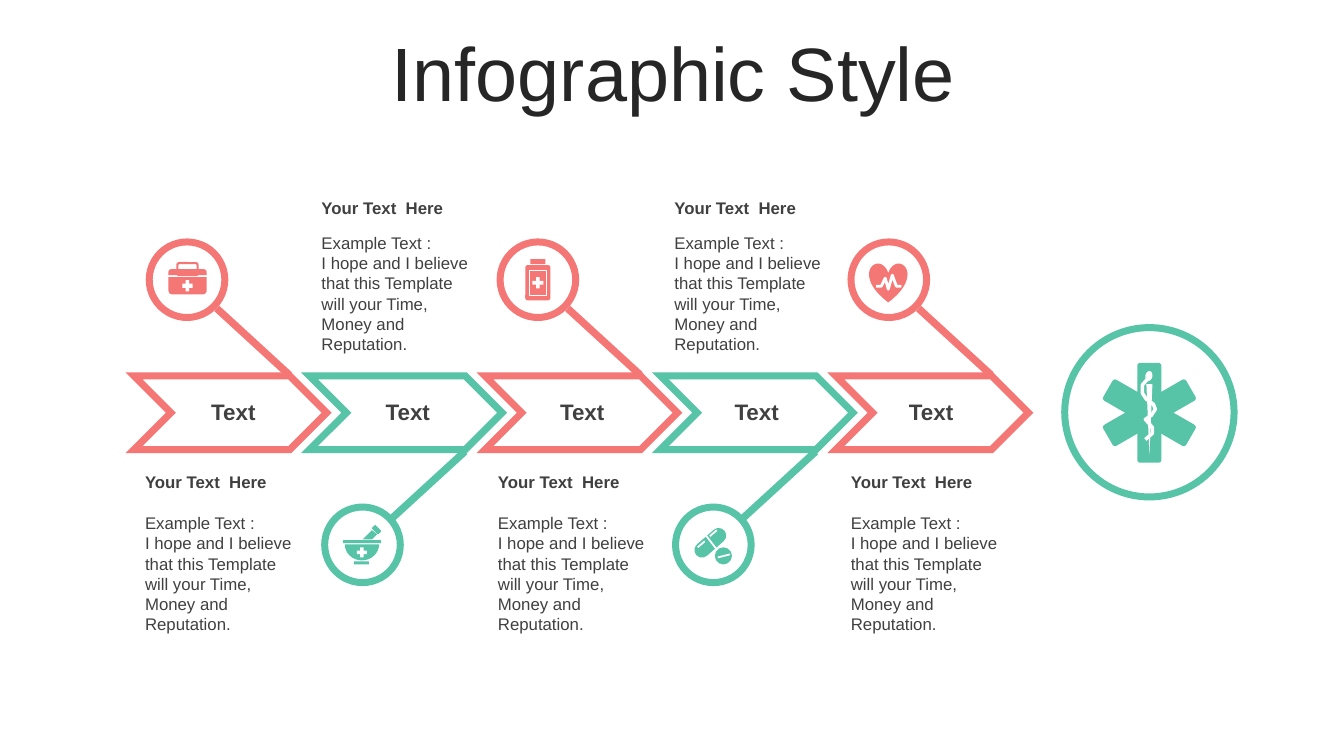
from math import cos, pi, sin

from lxml import etree
from pptx import Presentation
from pptx.dml.color import RGBColor
from pptx.enum.shapes import MSO_CONNECTOR, MSO_SHAPE
from pptx.enum.text import MSO_ANCHOR, PP_ALIGN
from pptx.oxml.ns import qn
from pptx.util import Inches, Pt

CHEVRON, OVAL, HEART = MSO_SHAPE.CHEVRON, MSO_SHAPE.OVAL, MSO_SHAPE.HEART
RECTANGLE, ROUNDED = MSO_SHAPE.RECTANGLE, MSO_SHAPE.ROUNDED_RECTANGLE
ROUND_TOP, CROSS = MSO_SHAPE.ROUND_2_SAME_RECTANGLE, MSO_SHAPE.CROSS
TRIANGLE = MSO_SHAPE.ISOSCELES_TRIANGLE
STRAIGHT = MSO_CONNECTOR.STRAIGHT
LEFT, CENTER = PP_ALIGN.LEFT, PP_ALIGN.CENTER
TOP, MIDDLE = MSO_ANCHOR.TOP, MSO_ANCHOR.MIDDLE

COLORS = {
    "coral": "F47775",
    "teal": "57C3A7",
    "white": "FFFFFF",
    "title": "262626",
    "text": "404040",
}

presentation = Presentation()
presentation.slide_width = Inches(13.33)
presentation.slide_height = Inches(7.5)
slide = presentation.slides.add_slide(presentation.slide_layouts[6])


def paint(shape, fill, line, width):
    shape.shadow.inherit = False
    if fill:
        shape.fill.solid()
        shape.fill.fore_color.rgb = RGBColor.from_string(COLORS[fill])
    else:
        shape.fill.background()
    if line:
        shape.line.color.rgb = RGBColor.from_string(COLORS[line])
        shape.line.width = Pt(width)
    else:
        shape.line.fill.background()


def add_line(x1, y1, x2, y2, color, width):
    line = slide.shapes.add_connector(
        STRAIGHT, Inches(x1), Inches(y1), Inches(x2), Inches(y2))
    line.line.color.rgb = RGBColor.from_string(COLORS[color])
    line.line.width = Pt(width)
    etree.SubElement(line._element.spPr, qn("a:effectLst"))


# Five steps: stem, chevron and icon ring, alternating above and below
PITCH = 1.74
step_colors = ["coral", "teal", "coral", "teal", "coral"]
for step, color in enumerate(step_colors):
    x = 1.33 + step * PITCH
    above = step % 2 == 0
    ring_end, arrow_end = (3.06, 3.72) if above else (5.14, 4.48)
    add_line(x + 0.82, ring_end, x + 1.54, arrow_end, color, 5.25)
    chevron = slide.shapes.add_shape(
        CHEVRON, Inches(x), Inches(3.73), Inches(1.91), Inches(0.73))
    paint(chevron, "white", color, 5)
    miter = etree.SubElement(chevron.line._get_or_add_ln(), qn("a:miter"))
    miter.set("lim", "800000")
    ring = slide.shapes.add_shape(
        OVAL, Inches(x + 0.15), Inches(2.4 if above else 5.03),
        Inches(0.75), Inches(0.75))
    paint(ring, "white", color, 5)

# Goal ring and icon parts: kind, left, top, width, height, fill, line,
# line width, rotation, adjustment
parts = [
    (OVAL, 10.56, 3.25, 1.68, 1.68, "white", "teal", 5, 0, None),
    # First-aid kit
    (ROUNDED, 1.76, 2.61, 0.2, 0.12, None, "coral", 1.5, 0, 0.15),
    (ROUND_TOP, 1.67, 2.67, 0.38, 0.06, "coral", None, 0, 0, 0.5),
    (ROUND_TOP, 1.67, 2.75, 0.38, 0.17, "coral", None, 0, 180, 0.22),
    (CROSS, 1.81, 2.78, 0.1, 0.11, "white", None, 0, 0, 0.33),
    # Medicine bottle
    (ROUNDED, 5.26, 2.57, 0.15, 0.05, "coral", None, 0, 0, 0.1),
    (ROUNDED, 5.21, 2.63, 0.25, 0.35, "coral", None, 0, 0, 0.1),
    (RECTANGLE, 5.25, 2.68, 0.17, 0.25, None, "white", 0.75, 0, None),
    (CROSS, 5.28, 2.75, 0.11, 0.11, "white", None, 0, 0, 0.33),
    # Heart
    (HEART, 8.62, 2.61, 0.38, 0.39, "coral", None, 0, 0, None),
    # Mortar and pestle head
    (ROUNDED, 3.4, 5.36, 0.38, 0.03, "teal", None, 0, 0, 0.2),
    (ROUNDED, 3.51, 5.57, 0.15, 0.03, "teal", None, 0, 0, 0.2),
    (ROUNDED, 3.69, 5.23, 0.09, 0.05, "teal", None, 0, 45, 0.2),
    # Capsule and tablet
    (ROUNDED, 6.86, 5.31, 0.37, 0.15, "teal", None, 0, -41, 0.5),
    (OVAL, 7.09, 5.43, 0.17, 0.17, "teal", None, 0, 0, None),
    # Six-armed star with staff and snake head
    (ROUNDED, 11.28, 3.6, 0.24, 0.99, "teal", None, 0, 0, 0.12),
    (ROUNDED, 11.28, 3.62, 0.24, 0.95, "teal", None, 0, 60, 0.12),
    (ROUNDED, 11.28, 3.62, 0.24, 0.95, "teal", None, 0, -60, 0.12),
    (TRIANGLE, 11.37, 3.81, 0.06, 0.7, "white", None, 0, 180, None),
    (OVAL, 11.36, 3.68, 0.07, 0.1, "white", None, 0, 10, None),
]
for kind, x, y, w, h, fill, line, width, rotation, adjustment in parts:
    part = slide.shapes.add_shape(
        kind, Inches(x), Inches(y), Inches(w), Inches(h))
    paint(part, fill, line, width)
    part.rotation = rotation
    if adjustment is not None:
        part.adjustments[0] = adjustment

# Drawn outlines: points, fill, line, line width
bowl = [(3.59 + 0.17 * cos(pi * i / 16), 5.4 + 0.16 * sin(pi * i / 16))
        for i in range(17)]
pestle = [(3.6, 5.35), (3.69, 5.26), (3.74, 5.3), (3.69, 5.35)]
pulse = [(8.69, 2.84), (8.74, 2.84), (8.78, 2.76), (8.81, 2.87),
         (8.85, 2.73), (8.89, 2.84), (8.94, 2.84)]
snake = [(11.39, 3.75), (11.33, 3.82), (11.33, 3.9), (11.37, 3.96),
         (11.44, 4.01), (11.46, 4.06), (11.42, 4.12), (11.36, 4.16),
         (11.43, 4.24), (11.43, 4.3), (11.36, 4.36)]
outlines = [
    (bowl, "teal", None, 0),
    (pestle, "teal", None, 0),
    (pulse, None, "white", 2),
    (snake, None, "white", 2.5),
]
for points, fill, line, width in outlines:
    corners = [(Inches(x), Inches(y)) for x, y in points]
    builder = slide.shapes.build_freeform(*corners[0])
    builder.add_line_segments(corners[1:], close=fill is not None)
    paint(builder.convert_to_shape(), fill, line, width)

# Cross on the mortar, above its bowl
mortar_cross = slide.shapes.add_shape(
    CROSS, Inches(3.54), Inches(5.43), Inches(0.1), Inches(0.1))
paint(mortar_cross, "white", None, 0)
mortar_cross.adjustments[0] = 0.33

# Highlights on capsule and tablet
add_line(7, 5.31, 7.1, 5.44, "white", 1.25)
add_line(6.92, 5.43, 6.99, 5.37, "white", 1.25)
add_line(7.04, 5.32, 7.11, 5.26, "white", 1.25)
add_line(7.12, 5.53, 7.24, 5.5, "white", 1.25)

# Texts: left, top, width, height, size, bold, color, alignment, anchor, lines
texts = [(0.35, 0.37, 12.66, 0.79, 54, False, "title", CENTER, MIDDLE,
          ["Infographic Style"])]
body = ["Example Text :",
        "I hope and I believe that this Template will your Time, "
        "Money and Reputation."]
for step in range(len(step_colors)):
    x = 1.34 + step * 1.75
    heading_top, body_top = (4.63, 5.04) if step % 2 == 0 else (1.91, 2.26)
    texts += [
        (x, heading_top, 1.75, 0.3, 12, True, "text", LEFT, TOP,
         ["Your Text  Here"]),
        (x, body_top, 1.75, 1.31, 12, False, "text", LEFT, TOP, body),
        (1.95 + step * 1.73, 3.9, 0.73, 0.37, 16, True, "text", CENTER, TOP,
         ["Text"]),
    ]
for x, y, w, h, size, bold, color, alignment, anchor, lines in texts:
    box = slide.shapes.add_textbox(
        Inches(x), Inches(y), Inches(w), Inches(h))
    frame = box.text_frame
    frame.word_wrap = True
    frame.vertical_anchor = anchor
    for index, line in enumerate(lines):
        paragraph = frame.add_paragraph() if index else frame.paragraphs[0]
        paragraph.alignment = alignment
        if color == "title":
            paragraph.line_spacing = 0.9
        run = paragraph.add_run()
        run.text = line
        run.font.name = "Arial"
        run.font.size = Pt(size)
        run.font.bold = bold
        run.font.color.rgb = RGBColor.from_string(COLORS[color])

presentation.save("out.pptx")
